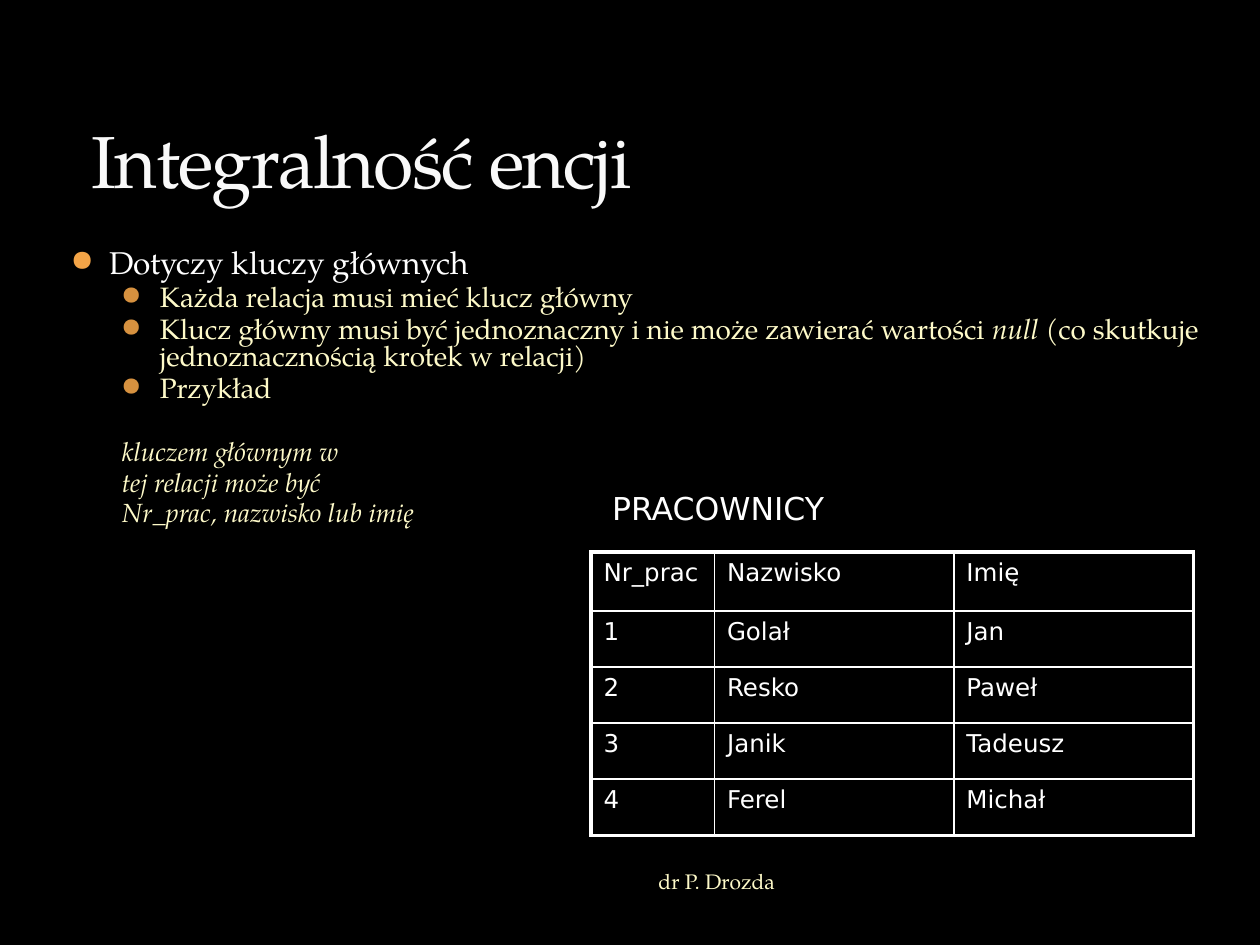
"""Builds the slide on entity integrity with its example table of employees."""
import pptx
import pptx.dml.color
import pptx.enum.text
import pptx.oxml.ns
import pptx.util
from lxml import etree
from pptx.util import Inches

SERIF, SANS = "TeX Gyre Pagella", "DejaVu Sans"
WHITE, CREAM, BLACK = "FFFFFF", "FEFAC9", "000000"
Align = pptx.enum.text.PP_ALIGN
Anchor = pptx.enum.text.MSO_ANCHOR


def rgb(hex_colour):
    return pptx.dml.color.RGBColor.from_string(hex_colour)


def add_node(parent, tag, **attributes):
    node = etree.SubElement(parent, pptx.oxml.ns.qn(tag))
    for key, value in attributes.items():
        node.set(key, str(value))
    return node


def write(paragraph, text, size=16, font=SERIF, colour=WHITE, italic=False, spacing=None):
    run = paragraph.add_run()
    run.text = text
    run.font.size = pptx.util.Pt(size)
    run.font.name = font
    run.font.italic = italic
    run.font.color.rgb = rgb(colour)
    if spacing is not None:
        run.font._element.set("spc", str(spacing))


class SlideWriter:
    def __init__(self, presentation, background):
        self.slide = presentation.slides.add_slide(presentation.slide_layouts[5])
        self.slide.background.fill.solid()
        self.slide.background.fill.fore_color.rgb = rgb(background)

    def title(self, text, left, top, width, height):
        heading = self.slide.shapes.title
        heading.left, heading.top, heading.width, heading.height = left, top, width, height
        frame = heading.text_frame
        frame.auto_size = pptx.enum.text.MSO_AUTO_SIZE.NONE
        frame.vertical_anchor = Anchor.BOTTOM
        frame.paragraphs[0].alignment = Align.LEFT
        write(frame.paragraphs[0], text, size=42, colour="F9F9F9", spacing=-100)

    def text_frame(self, left, top, width, height, anchor=Anchor.TOP):
        frame = self.slide.shapes.add_textbox(left, top, width, height).text_frame
        frame.word_wrap = True
        frame.vertical_anchor = anchor
        return frame

    def label(self, text, *place, anchor=Anchor.TOP, align=Align.LEFT, **style):
        paragraph = self.text_frame(*place, anchor=anchor).paragraphs[0]
        paragraph.alignment = align
        write(paragraph, text, **style)

    def outline(self, points, *place):
        frame = self.text_frame(*place)
        for number, (level, before, bullet, runs) in enumerate(points):
            paragraph = frame.add_paragraph() if number else frame.paragraphs[0]
            paragraph.level = level
            paragraph.line_spacing = 0.8
            paragraph.space_before = pptx.util.Pt(before)
            properties = paragraph._p.get_or_add_pPr()
            properties.set("marL", str(Inches(0.3 + 0.4 * level)))
            properties.set("indent", str(Inches(-0.3)))
            if bullet:
                add_node(add_node(properties, "a:buClr"), "a:srgbClr", val=bullet)
                add_node(properties, "a:buSzPct", val=85000)
                add_node(properties, "a:buFont", typeface=SERIF)
                add_node(properties, "a:buChar", char="●")
            else:
                add_node(properties, "a:buNone")
            for text, style in runs:
                write(paragraph, text, **style)

    def table(self, rows, widths, header_height, left, top, height):
        frame = self.slide.shapes.add_table(
            len(rows), len(widths), left, top, sum(widths), height)
        grid = frame.table
        grid.first_row = grid.horz_banding = False
        last_row, last_column = len(rows) - 1, len(widths) - 1
        for column, width in zip(grid.columns, widths):
            column.width = width
        for y, values in enumerate(rows):
            grid.rows[y].height = (height - header_height) // last_row if y else header_height
            for x, value in enumerate(values):
                cell = grid.cell(y, x)
                write(cell.text_frame.paragraphs[0], value, size=14, font=SANS)
                outer = {"L": x == 0, "R": x == last_column, "T": y == 0, "B": y == last_row}
                self.borders(cell, outer)
                cell.fill.background()

    def borders(self, cell, outer):
        properties = cell._tc.get_or_add_tcPr()
        for side, is_outer in outer.items():
            width = pptx.util.Pt(2.25 if is_outer else 1)
            line = add_node(properties, f"a:ln{side}", w=width)
            add_node(add_node(line, "a:solidFill"), "a:srgbClr", val=WHITE)


def main():
    presentation = pptx.Presentation()
    presentation.slide_width, presentation.slide_height = Inches(10), Inches(7.5)
    page = SlideWriter(presentation, BLACK)

    page.label("dr P. Drozda", Inches(2.33), Inches(6.78), Inches(3.92), Inches(0.42),
               anchor=Anchor.MIDDLE, align=Align.RIGHT, size=12, colour=CREAM)
    page.title("Integralność encji", Inches(0.63), Inches(0.33), Inches(8.75), Inches(1.33))

    rule = {"colour": CREAM}
    term = {"colour": CREAM, "italic": True}
    remark = {"colour": CREAM, "italic": True, "size": 15}
    orange, dark_orange = "F3A447", "D6913F"
    integrity_points = [
        (0, 6, orange, [("Dotyczy kluczy głównych", {"size": 18})]),
        (1, 3, dark_orange, [("Każda relacja musi mieć klucz główny", rule)]),
        (1, 3, dark_orange, [
            ("Klucz główny musi być jednoznaczny i nie może zawierać wartości ", rule),
            ("null ", term),
            ("(co skutkuje jednoznacznością krotek w relacji)", rule)]),
        (1, 3, dark_orange, [("Przykład", rule)]),
        (1, 21.4, None, [("kluczem głównym w", remark)]),
        (1, 3, None, [("tej relacji może być", remark)]),
        (1, 3, None, [("Nr_prac, nazwisko lub imię", remark)]),
    ]
    page.outline(integrity_points, Inches(0.47), Inches(1.94), Inches(9.53), Inches(2.68))

    employees = [
        ("Nr_prac", "Nazwisko", "Imię"),
        ("1", "Golał", "Jan"),
        ("2", "Resko", "Paweł"),
        ("3", "Janik", "Tadeusz"),
        ("4", "Ferel", "Michał"),
    ]
    page.table(employees, [Inches(0.98), Inches(1.9), Inches(1.9)], Inches(0.47),
               Inches(4.69), Inches(4.38), Inches(2.25))
    page.label("PRACOWNICY", Inches(4.76), Inches(3.83), Inches(2.2), Inches(0.4),
               size=18, font=SANS)

    presentation.save("out.pptx")


if __name__ == "__main__":
    main()
